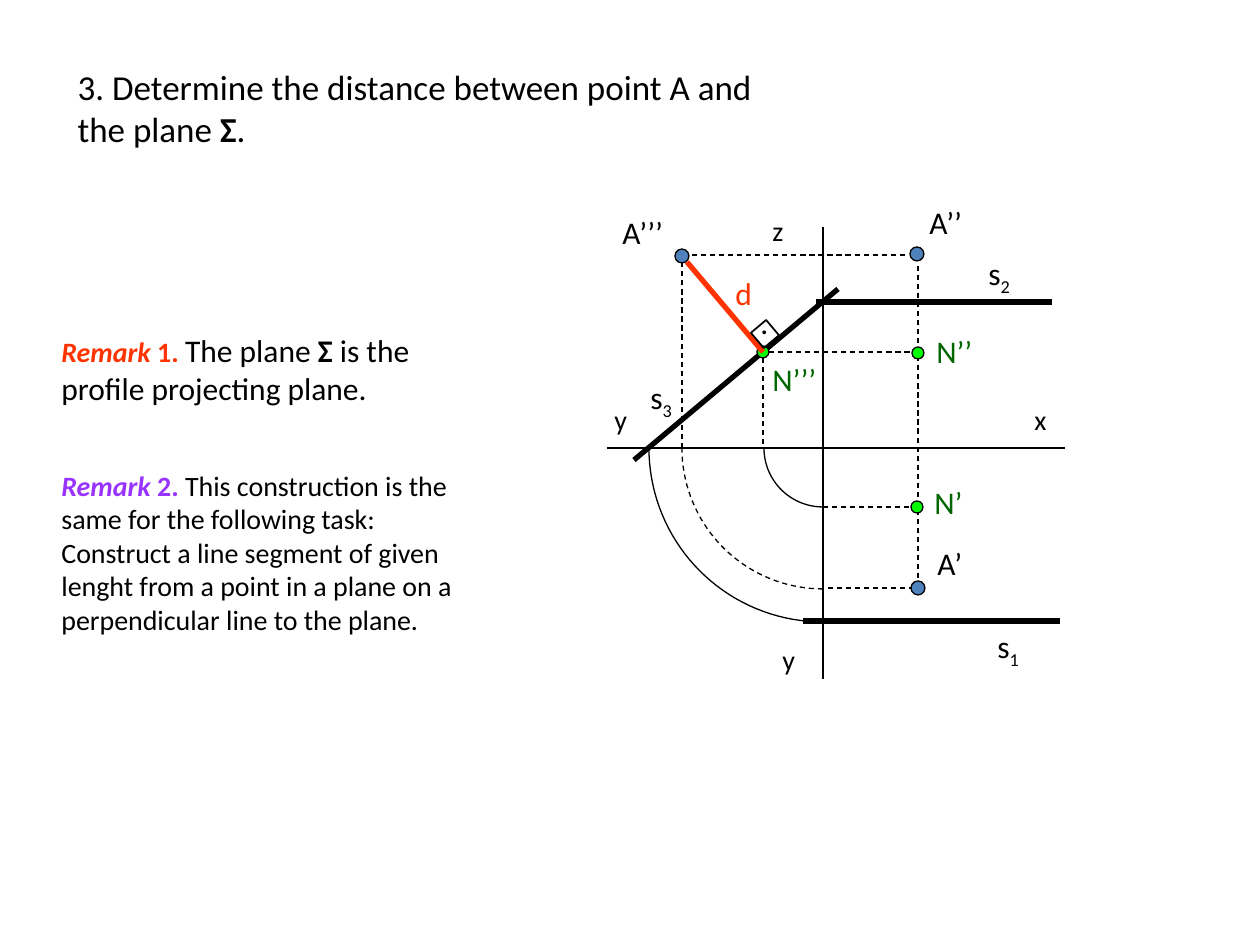
import math
from dataclasses import dataclass

from lxml import etree
from pptx import Presentation
from pptx import util as u
from pptx.dml.color import RGBColor
from pptx.enum import dml, shapes, text
from pptx.oxml.ns import qn

BLACK = RGBColor(0, 0, 0)
BLUE = RGBColor(0x4F, 0x81, 0xBD)
LIME = RGBColor(0, 0xFF, 0)
GREEN = RGBColor(0, 0x66, 0)
RED = RGBColor(0xFF, 0x33, 0)
PURPLE = RGBColor(0x99, 0x33, 0xFF)

ORIGIN_X, ORIGIN_Y = 823, 448


def px(length):
    return u.Emu(round(length * 914400 / 126))


@dataclass
class Span:
    words: str
    size: int = 18
    colour: RGBColor = BLACK
    bold: bool = False
    italic: bool = False
    subscript: bool = False


class Drawing:
    font = "Calibri"
    thin, axis, thick = 0.75, 1, 3

    def __init__(self, page):
        self.page = page

    def stroke(self, line, width, colour=BLACK, dashed=False):
        line.color.rgb = colour
        line.width = u.Pt(width)
        if dashed:
            line.dash_style = dml.MSO_LINE.DASH

    def fill_text(self, box, spans):
        frame = box.text_frame
        frame.word_wrap = True
        frame.auto_size = text.MSO_AUTO_SIZE.SHAPE_TO_FIT_TEXT
        frame.vertical_anchor = text.MSO_ANCHOR.TOP
        para = frame.paragraphs[0]
        para.alignment = text.PP_ALIGN.LEFT
        for span in spans:
            run = para.add_run()
            run.text = span.words
            run.font.name = self.font
            run.font.size = u.Pt(span.size)
            run.font.color.rgb = span.colour
            run.font.bold = span.bold
            run.font.italic = span.italic
            if span.subscript:
                run._r.get_or_add_rPr().set("baseline", "-25000")

    def title(self, x, y, width, height, *spans):
        box = self.page.shapes.title
        box.left, box.top, box.width, box.height = map(px, (x, y, width, height))
        self.fill_text(box, spans)

    def label(self, x, y, width, height, *spans):
        box = self.page.shapes.add_textbox(*map(px, (x, y, width, height)))
        self.fill_text(box, spans)

    def line(self, x1, y1, x2, y2, width=thin, colour=BLACK, dashed=False):
        connector = self.page.shapes.add_connector(
            shapes.MSO_CONNECTOR.STRAIGHT, *map(px, (x1, y1, x2, y2)))
        self.stroke(connector.line, width, colour, dashed)
        etree.SubElement(connector._element.spPr, qn("a:effectLst"))

    def quarter_arc(self, radius, dashed=False):
        steps = 36
        angles = [math.pi / 2 * (1 + step / steps) for step in range(steps + 1)]
        points = [(px(ORIGIN_X + radius * math.cos(angle)),
                   px(ORIGIN_Y + radius * math.sin(angle))) for angle in angles]
        builder = self.page.shapes.build_freeform(*points[0])
        builder.add_line_segments(points[1:], close=False)
        arc = builder.convert_to_shape()
        arc.shadow.inherit = False
        arc.fill.background()
        self.stroke(arc.line, self.thin, dashed=dashed)

    def point(self, x, y, size, colour):
        dot = self.page.shapes.add_shape(
            shapes.MSO_SHAPE.OVAL, *map(px, (x - size / 2, y - size / 2, size, size)))
        dot.shadow.inherit = False
        dot.fill.solid()
        dot.fill.fore_color.rgb = colour
        self.stroke(dot.line, self.thin)

    def right_angle(self, x, y, size, rotation):
        square = self.page.shapes.add_shape(
            shapes.MSO_SHAPE.RECTANGLE, *map(px, (x, y, size, size)))
        square.rotation = rotation
        square.shadow.inherit = False
        square.fill.background()
        self.stroke(square.line, self.axis)


def main():
    deck = Presentation()
    deck.slide_width, deck.slide_height = px(1260), px(945)
    drawing = Drawing(deck.slides.add_slide(deck.slide_layouts[5]))

    drawing.title(65, 59, 722, 97,
                  Span("3. Determine the distance between point A and the plane ", 20),
                  Span("Σ", 20, bold=True), Span(".", 20))

    drawing.line(607, ORIGIN_Y, 1065, ORIGIN_Y, drawing.axis)
    drawing.line(ORIGIN_X, 679, ORIGIN_X, 227, drawing.axis)

    for radius, dashed in ((174, False), (141, True), (59, False)):
        drawing.quarter_arc(radius, dashed)

    for trace in ((816, 302, 1052, 302), (803, 621, 1060, 621), (634, 460, 838, 289)):
        drawing.line(*trace, drawing.thick)

    for projector in ((918, 266, 918, 585), (914, 588, ORIGIN_X, 588),
                      (683, 255, 908, 255), (682, ORIGIN_Y, 682, 256),
                      (769, 352, 916, 352), (763, 358, 763, ORIGIN_Y),
                      (ORIGIN_X, 507, 918, 507)):
        drawing.line(*projector, dashed=True)

    for x, y in ((917, 254), (918, 588), (682, 256)):
        drawing.point(x, y, 14, BLUE)
    for x, y in ((763, 352), (918, 353), (917, 507)):
        drawing.point(x, y, 12, LIME)

    drawing.line(687, 262, 763, 352, drawing.thick, RED)
    drawing.right_angle(755, 324, 20, 319.9)

    for name, x, y, width in (("x", 1022, 396, 73), ("y", 770, 636, 63),
                              ("y", 602, 396, 63), ("z", 760, 207, 63)):
        drawing.label(x, y, width, 47, Span(name, 16))

    for name, x, y, width, colour in (
            ("A’’", 917, 197, 73, BLACK), ("A’", 925, 538, 66, BLACK),
            ("A’’’", 610, 207, 97, BLACK), ("N’’’", 760, 354, 84, GREEN),
            ("N’’", 924, 326, 77, GREEN), ("N’", 922, 477, 77, GREEN),
            ("d", 723, 268, 54, RED), (".", 748, 297, 25, BLACK)):
        drawing.label(x, y, width, 50, Span(name, colour=colour))

    for index, x, y, width in (("1", 985, 621, 77), ("2", 976, 248, 91),
                               ("3", 638, 372, 55)):
        drawing.label(x, y, width, 50, Span("s"), Span(index, subscript=True))

    drawing.label(49, 325, 433, 89,
                  Span("Remark ", 16, RED, True, True), Span("1. ", 16, RED, True),
                  Span("The plane "), Span("Σ", bold=True),
                  Span(" is the profile projecting plane."))
    drawing.label(49, 462, 420, 183,
                  Span("Remark ", 16, PURPLE, True, True), Span("2. ", 16, PURPLE, True),
                  Span("This construction is the same for the following task: "
                       "Construct a line segment of given lenght from a point in a "
                       "plane on a perpendicular line to the plane.", 16))

    deck.save("out.pptx")


if __name__ == "__main__":
    main()
